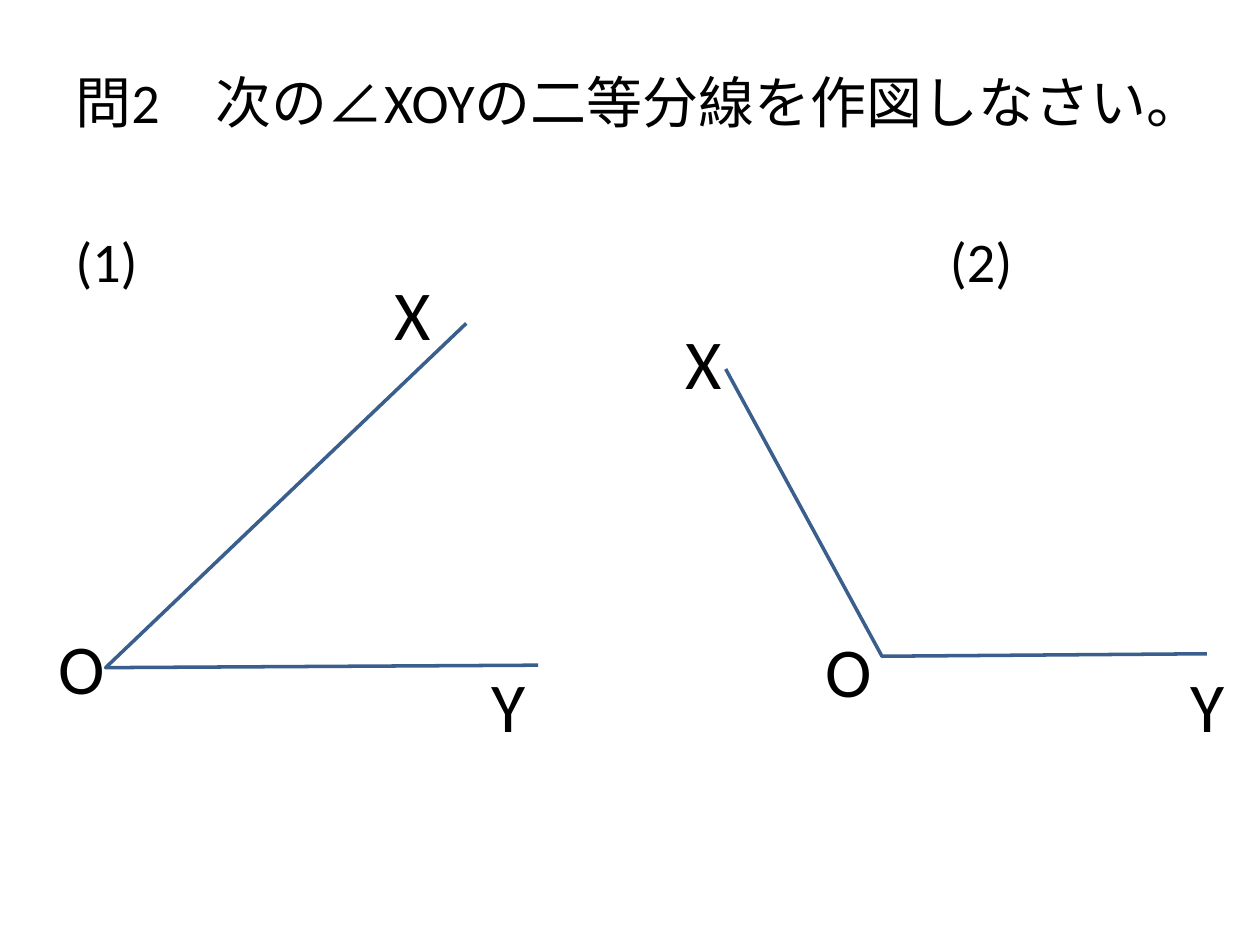
import pptx
import pptx.dml.color
import pptx.enum.text
import pptx.util
from pptx.util import Cm
import lxml.etree

COLOURS = {"text": "000000", "line": "3A5F8C"}
LABEL_SIZE = (1.19, 1.96)

ANGLES = [
    {
        "box": (0.94, 5.33),
        "rays": [(8.46, 1.19), (1.19, 8.13), (9.91, 8.08)],
        "labels": {"X": (6.76, 0), "O": (0, 7.14), "Y": (8.71, 7.9)},
    },
    {
        "box": (13.56, 6.32),
        "rays": [(1.07, 1.12), (4.22, 6.91), (10.77, 6.86)],
        "labels": {"X": (0, 0), "O": (2.84, 6.2), "Y": (10.19, 6.91)},
    },
]


def set_attributes(target, values):
    for name, value in values.items():
        setattr(target, name, value)


def colour(name):
    return pptx.dml.color.RGBColor.from_string(COLOURS[name])


def add_text(slide, box, text, size, anchor="TOP"):
    """Add a one-paragraph text box and return its paragraph."""
    frame = slide.shapes.add_textbox(*map(Cm, box)).text_frame
    set_attributes(frame, {
        "word_wrap": True,
        "vertical_anchor": getattr(pptx.enum.text.MSO_ANCHOR, anchor),
    })
    paragraph = frame.paragraphs[0]
    run = paragraph.add_run()
    run.text = text
    set_attributes(run.font, {"name": "Calibri", "size": pptx.util.Pt(size)})
    run.font.color.rgb = colour("text")
    return paragraph


def add_title(slide, box):
    add_text(slide, box, "問2\u3000次の∠XOYの二等分線を作図しなさい。".replace("\u3000", "　"),
             32, "MIDDLE")


def add_question_numbers(slide, box, second_offset):
    """Put both numbers on one line, the second at a tab stop."""
    paragraph = add_text(slide, box, "(1)\t(2)", 32)
    namespace = pptx.oxml.ns.qn("a:tabLst")
    tabs = lxml.etree.SubElement(paragraph._p.get_or_add_pPr(), namespace)
    lxml.etree.SubElement(tabs, pptx.oxml.ns.qn("a:tab"),
                          pos=str(Cm(second_offset)), algn="l")


def add_angle(slide, box, rays, labels):
    """Draw the angle XOY and its point names from the corner of the box."""
    left, top = box
    points = [(Cm(left + x), Cm(top + y)) for x, y in rays]
    builder = slide.shapes.build_freeform(*points[0])
    builder.add_line_segments(points[1:], close=False)
    shape = builder.convert_to_shape()
    shape.shadow.inherit = False
    shape.fill.background()
    shape.line.color.rgb = colour("line")
    shape.line.width = pptx.util.Pt(2)
    for name, (x, y) in labels.items():
        add_text(slide, (left + x, top + y, *LABEL_SIZE), name, 40)


def main():
    presentation = pptx.Presentation()
    set_attributes(presentation, {"slide_width": Cm(25.4), "slide_height": Cm(19.05)})
    slide = presentation.slides.add_slide(presentation.slide_layouts[6])
    add_title(slide, (1.27, 0.76, 22.86, 2.57))
    add_question_numbers(slide, (1.27, 4.45, 22.86, 1.68), 17.63)
    for angle in ANGLES:
        add_angle(slide, **angle)
    presentation.save("out.pptx")


if __name__ == "__main__":
    main()
